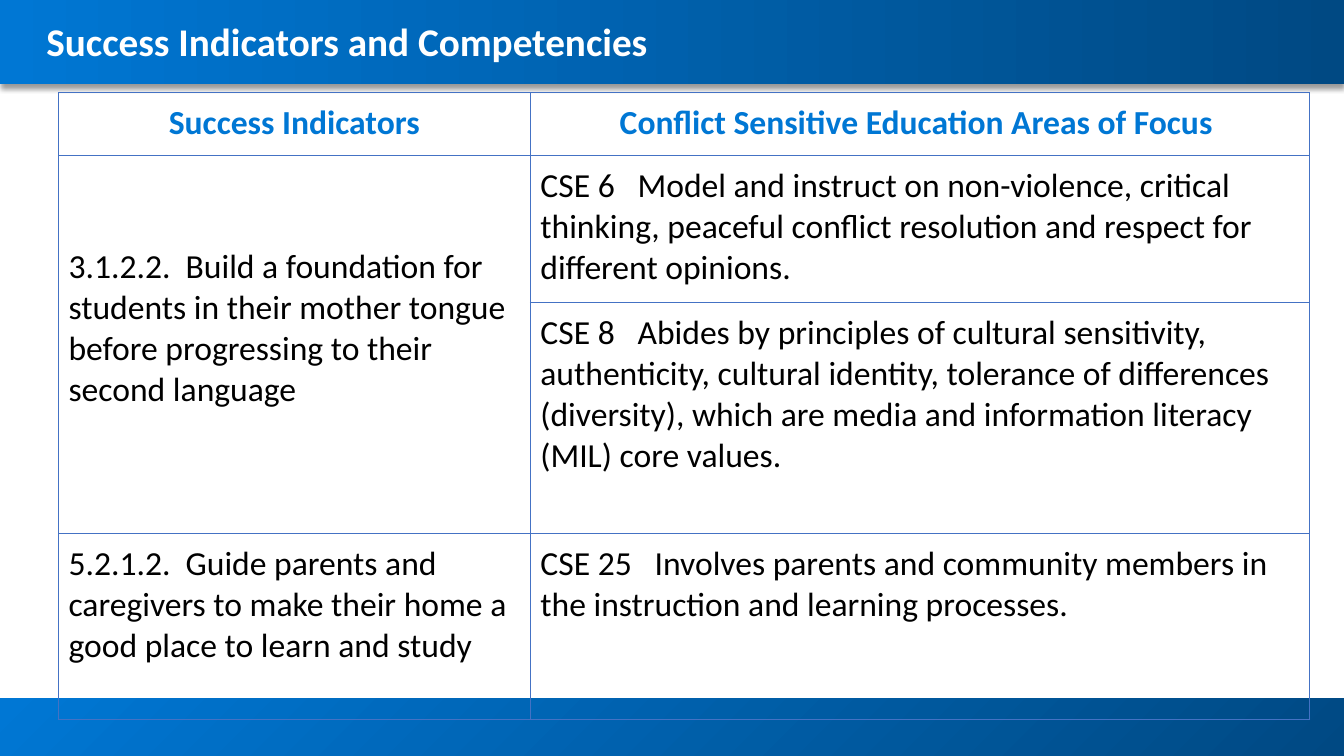
from dataclasses import dataclass

from lxml.etree import SubElement
from pptx import Presentation
from pptx.dml.color import RGBColor
from pptx.enum.shapes import MSO_SHAPE
from pptx.enum.text import MSO_ANCHOR, PP_ALIGN
from pptx.oxml.ns import qn
from pptx.shapes.autoshape import Shape
from pptx.slide import Slide
from pptx.table import Table, _Cell
from pptx.text.text import _Paragraph
from pptx.util import Inches, Pt

BRIGHT = RGBColor(0x00, 0x77, 0xD4)
DARK = RGBColor(0x00, 0x49, 0x83)
BORDER = RGBColor(0x44, 0x72, 0xC4)
WHITE = RGBColor(0xFF, 0xFF, 0xFF)
BLACK = RGBColor(0x00, 0x00, 0x00)

WIDTH, HEIGHT = 13.33, 7.5
COLUMNS = [4.68, 7.73]
ROWS = [0.62, 1.46, 2.29, 1.85]
PADDING = 0.1

TITLE_FONT = {"name": "Calibri", "size": Pt(28), "bold": True}
HEAD_FONT = {"name": "Calibri", "size": Pt(24), "bold": True}
BODY_FONT = {"name": "Calibri", "size": Pt(24), "bold": False}


@dataclass
class Bar:
    top: float
    height: float
    start: RGBColor
    end: RGBColor
    angle: float


@dataclass
class Entry:
    row: int
    column: int
    text: str
    header: bool = False
    top_margin: float = PADDING


HEADER_BAR = Bar(0, 0.83, BRIGHT, DARK, 0)
FOOTER_BAR = Bar(6.93, 0.57, DARK, BRIGHT, 135)

ENTRIES = [
    Entry(0, 0, "Success Indicators", header=True),
    Entry(0, 1, "Conflict Sensitive Education Areas of Focus ", header=True),
    Entry(1, 0, "3.1.2.2.  Build a foundation for students in their mother tongue "
                "before progressing to their second language", top_margin=0.91),
    Entry(1, 1, "CSE 6   Model and instruct on non-violence, critical thinking, "
                "peaceful conflict resolution and respect for different opinions."),
    Entry(2, 1, "CSE 8   Abides by principles of cultural sensitivity, authenticity, "
                "cultural identity, tolerance of differences (diversity), which are "
                "media and information literacy (MIL) core values."),
    Entry(3, 0, "5.2.1.2.  Guide parents and caregivers to make their home a good "
                "place to learn and study"),
    Entry(3, 1, "CSE 25   Involves parents and community members in the instruction "
                "and learning processes."),
]


def format_font(p: _Paragraph, values: dict, color: RGBColor) -> None:
    for r in p.runs:
        for name, value in values.items():
            setattr(r.font, name, value)
        r.font.color.rgb = color


def add_bar(s: Slide, bar: Bar) -> Shape:
    sp = s.shapes.add_shape(MSO_SHAPE.RECTANGLE, 0, Inches(bar.top),
                            Inches(WIDTH), Inches(bar.height))
    sp.shadow.inherit = False
    sp.line.fill.background()
    sp.fill.gradient()
    sp.fill.gradient_angle = bar.angle
    for stop, color in zip(sp.fill.gradient_stops, (bar.start, bar.end)):
        stop.color.rgb = color
    return sp


def add_shadow(sp: Shape) -> None:
    effects = sp._element.spPr.find(qn("a:effectLst"))
    shadow = SubElement(effects, qn("a:outerShdw"), blurRad=str(Pt(4)),
                        dist=str(Pt(3)), dir="5400000", algn="t", rotWithShape="0")
    color = SubElement(shadow, qn("a:srgbClr"), val=str(BLACK))
    SubElement(color, qn("a:alpha"), val="40000")


def style_cell(cell: _Cell) -> None:
    tc_pr = cell._tc.get_or_add_tcPr()
    for side in ("lnL", "lnR", "lnT", "lnB"):
        line = SubElement(tc_pr, qn(f"a:{side}"), w=str(Pt(0.75)))
        fill = SubElement(line, qn("a:solidFill"))
        SubElement(fill, qn("a:srgbClr"), val=str(BORDER))
    cell.fill.background()


def fill_entry(table: Table, entry: Entry) -> None:
    cell = table.cell(entry.row, entry.column)
    for side in ("left", "right", "bottom"):
        setattr(cell, f"margin_{side}", Inches(PADDING))
    cell.margin_top = Inches(entry.top_margin)
    cell.text = entry.text
    p = cell.text_frame.paragraphs[0]
    p.alignment = PP_ALIGN.CENTER if entry.header else PP_ALIGN.LEFT
    if entry.header:
        format_font(p, HEAD_FONT, BRIGHT)
    else:
        format_font(p, BODY_FONT, BLACK)


def add_title(s: Slide, text: str) -> None:
    title = s.shapes.title
    box = {"left": 0.46, "top": 0.17, "width": 12.41, "height": 0.5}
    for name, value in box.items():
        setattr(title, name, Inches(value))
    tf = title.text_frame
    tf.text = text
    tf.word_wrap = True
    tf.vertical_anchor = MSO_ANCHOR.MIDDLE
    for side in ("left", "right", "top", "bottom"):
        setattr(tf, f"margin_{side}", 0)
    p = tf.paragraphs[0]
    p.alignment = PP_ALIGN.LEFT
    p.line_spacing = 0.99
    format_font(p, TITLE_FONT, WHITE)
    # Bring the title in front of the bars
    s.shapes._spTree.append(title._element)


def add_indicator_table(s: Slide) -> None:
    frame = s.shapes.add_table(len(ROWS), len(COLUMNS), Inches(0.58), Inches(0.92),
                               Inches(sum(COLUMNS)), Inches(sum(ROWS)))
    table = frame.table
    table.first_row = table.horz_banding = False
    for column, width in zip(table.columns, COLUMNS):
        column.width = Inches(width)
    for row, height in zip(table.rows, ROWS):
        row.height = Inches(height)
    for cell in table.iter_cells():
        style_cell(cell)
    table.cell(1, 0).merge(table.cell(2, 0))
    for entry in ENTRIES:
        fill_entry(table, entry)


def main() -> None:
    prs = Presentation()
    prs.slide_width, prs.slide_height = Inches(WIDTH), Inches(HEIGHT)
    s = prs.slides.add_slide(prs.slide_layouts[5])

    # Header and footer bars
    add_bar(s, FOOTER_BAR)
    add_shadow(add_bar(s, HEADER_BAR))

    # Title and table
    add_title(s, "Success Indicators and Competencies")
    add_indicator_table(s)

    prs.save("out.pptx")


if __name__ == "__main__":
    main()
